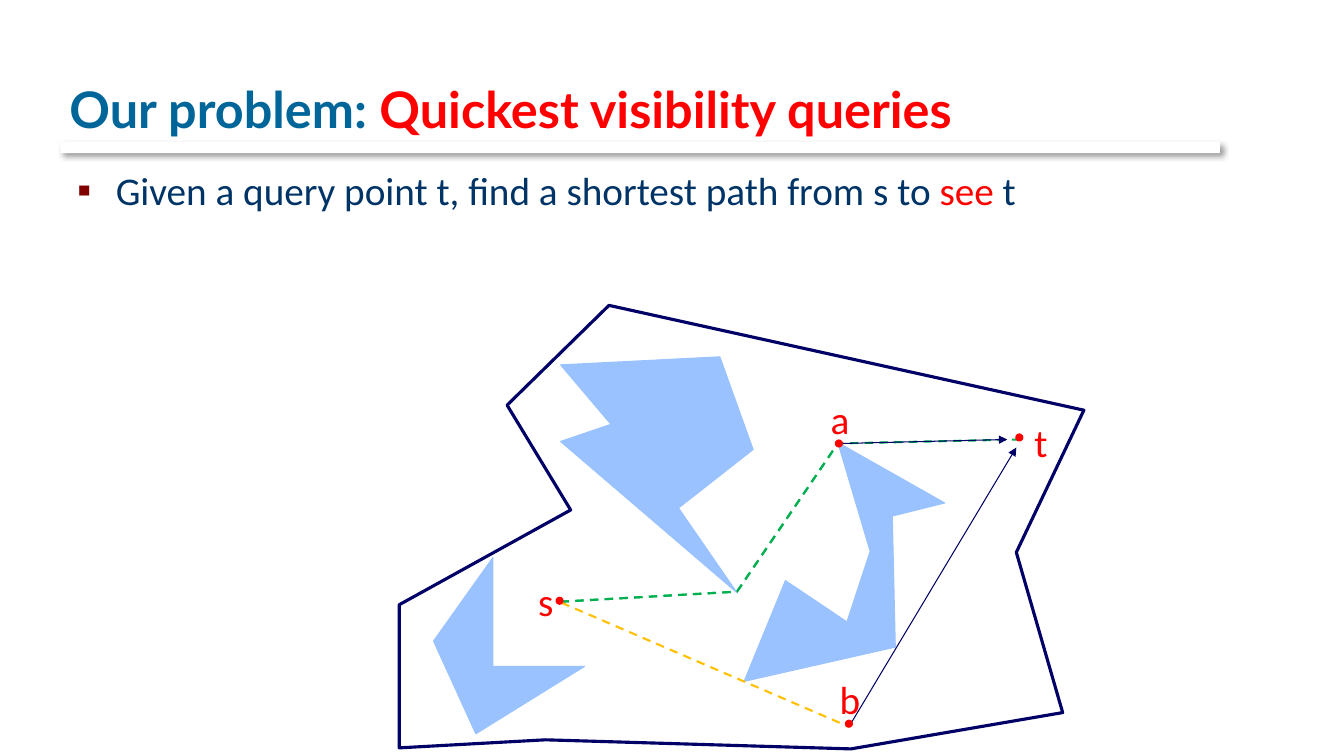
from lxml import etree
from pptx import Presentation
from pptx.dml.color import RGBColor
from pptx.enum.dml import MSO_LINE
from pptx.enum.shapes import MSO_CONNECTOR, MSO_SHAPE
from pptx.enum.text import MSO_ANCHOR
from pptx.oxml import parse_xml
from pptx.oxml.ns import nsdecls, qn
from pptx.util import Inches, Pt

TEAL = RGBColor(0x00, 0x66, 0x99)
RED = RGBColor(0xFF, 0x00, 0x00)
DARK_BLUE = RGBColor(0x00, 0x33, 0x66)
NAVY = RGBColor(0x00, 0x00, 0x66)
LIGHT_BLUE = RGBColor(0x99, 0xC2, 0xFF)
GREEN = RGBColor(0x00, 0xB0, 0x50)
ORANGE = RGBColor(0xFF, 0xC0, 0x00)
WHITE = RGBColor(0xFF, 0xFF, 0xFF)

BOUNDARY = [(5.03, 4.02), (6.04, 3.03), (10.75, 4.07), (10.08, 5.48), (10.54, 7.07),
            (8.44, 7.43), (5.41, 7.34), (3.96, 7.42), (3.96, 6), (5.66, 5.06)]
OBSTACLES = [
    [(8.31, 4.39), (8.63, 5.47), (8.4, 6.17), (7.79, 5.76), (7.38, 6.76),
     (8.88, 6.42), (8.85, 5.12), (9.37, 4.99)],
    [(7.14, 3.54), (5.56, 3.62), (6.06, 4.21), (5.56, 4.38), (7.31, 5.88),
     (6.73, 5.04), (7.47, 4.46)],
    [(4.89, 5.53), (4.3, 6.36), (4.72, 7.28), (5.8, 6.61), (4.89, 6.61)],
]
PATH_TO_A = [(5.56, 5.97), (7.31, 5.87), (8.31, 4.4)]
PATH_TO_T = PATH_TO_A + [(10.11, 4.36)]
# Name: (dot centre, top left of the label)
POINTS = {
    "s": ((5.55, 5.96), (5.24, 5.68)),
    "t": ((10.11, 4.34), (10.16, 4.1)),
    "a": ((8.32, 4.4), (8.14, 3.87)),
    "b": ((8.42, 7.18), (8.23, 6.65)),
}
DOT = 0.07


def add_text(slide, box, runs, *, size, font="Calibri", bold=False,
             anchor=MSO_ANCHOR.TOP):
    """Write (text, colour) runs as one paragraph and return the paragraph."""
    frame = slide.shapes.add_textbox(*map(Inches, box)).text_frame
    frame.word_wrap = True
    frame.vertical_anchor = anchor
    paragraph = frame.paragraphs[0]
    for text, color in runs:
        run = paragraph.add_run()
        run.text = text
        run.font.name = font
        run.font.size = Pt(size)
        run.font.bold = bold
        run.font.color.rgb = color
    return paragraph


def add_bullet(paragraph, color):
    properties = paragraph._p.get_or_add_pPr()
    properties.set("marL", str(Inches(0.38)))
    properties.set("indent", str(-Inches(0.38)))
    bullet_color = etree.SubElement(properties, qn("a:buClr"))
    etree.SubElement(bullet_color, qn("a:srgbClr"), val=str(color))
    etree.SubElement(properties, qn("a:buFont"), typeface="Calibri")
    etree.SubElement(properties, qn("a:buChar"), char="▪")


def add_title_rule(slide):
    """White bar that shows only by its soft shadow."""
    rule = slide.shapes.add_shape(MSO_SHAPE.RECTANGLE, *map(Inches, (0.6, 1.41, 11.5, 0.11)))
    rule.fill.solid()
    rule.fill.fore_color.rgb = WHITE
    rule.line.fill.background()
    rule._element.spPr.append(parse_xml(
        f'<a:effectLst {nsdecls("a")}><a:outerShdw blurRad="{Pt(4)}" dist="{Pt(3)}" '
        'dir="2700000" algn="tl" rotWithShape="0"><a:srgbClr val="000000">'
        '<a:alpha val="40000"/></a:srgbClr></a:outerShdw></a:effectLst>'))


def add_outline(slide, vertices, *, line, width, fill=None, close=True, dash=None):
    points = [(Inches(x), Inches(y)) for x, y in vertices]
    builder = slide.shapes.build_freeform(*points[0])
    builder.add_line_segments(points[1:], close=close)
    outline = builder.convert_to_shape()
    outline.shadow.inherit = False
    if fill is None:
        outline.fill.background()
    else:
        outline.fill.solid()
        outline.fill.fore_color.rgb = fill
    outline.line.color.rgb = line
    outline.line.width = Pt(width)
    outline.line.dash_style = dash


def add_segment(slide, start, end, *, color, width, dash=None, arrow=False):
    segment = slide.shapes.add_connector(MSO_CONNECTOR.STRAIGHT, *map(Inches, start + end))
    segment.line.color.rgb = color
    segment.line.width = Pt(width)
    segment.line.dash_style = dash
    if arrow:
        etree.SubElement(segment.line._get_or_add_ln(), qn("a:tailEnd"), type="triangle")
    etree.SubElement(segment._element.spPr, qn("a:effectLst"))


def add_point(slide, name, center, corner):
    x, y = center
    dot = slide.shapes.add_shape(MSO_SHAPE.OVAL, Inches(x - DOT / 2), Inches(y - DOT / 2),
                                 Inches(DOT), Inches(DOT))
    dot.shadow.inherit = False
    dot.fill.solid()
    dot.fill.fore_color.rgb = RED
    dot.line.color.rgb = RED
    dot.line.width = Pt(0.75)
    add_text(slide, (*corner, 0.27, 0.57), [(name, RED)], size=28)


def main():
    deck = Presentation()
    deck.slide_width, deck.slide_height = Inches(13.33), Inches(7.5)
    slide = deck.slides.add_slide(deck.slide_layouts[6])

    add_title_rule(slide)
    add_text(slide, (0.59, 0.17, 11.33, 1.25),
             [("Our problem: ", TEAL), ("Quickest visibility queries", RED)],
             size=36, font="Lato", bold=True, anchor=MSO_ANCHOR.BOTTOM)
    task = add_text(slide, (0.67, 1.6, 11.76, 2.21),
                    [("Given a query point t, find a shortest path from s to ", DARK_BLUE),
                     ("see", RED), (" t", DARK_BLUE)], size=28)
    add_bullet(task, RGBColor(0x80, 0x00, 0x00))

    add_outline(slide, BOUNDARY, line=NAVY, width=2.25)
    for obstacle in OBSTACLES:
        add_outline(slide, obstacle, line=LIGHT_BLUE, width=0.75, fill=LIGHT_BLUE)
    for path in (PATH_TO_T, PATH_TO_A):
        add_outline(slide, path, line=GREEN, width=1.5, close=False, dash=MSO_LINE.DASH)
    add_segment(slide, (5.57, 5.98), (8.42, 7.21), color=ORANGE, width=1.5,
                dash=MSO_LINE.DASH)
    for start, end in (((8.42, 7.21), (10.08, 4.44)), ((8.34, 4.4), (9.99, 4.36))):
        add_segment(slide, start, end, color=NAVY, width=0.75, arrow=True)
    for name, (center, corner) in POINTS.items():
        add_point(slide, name, center, corner)

    deck.save("out.pptx")


if __name__ == "__main__":
    main()
